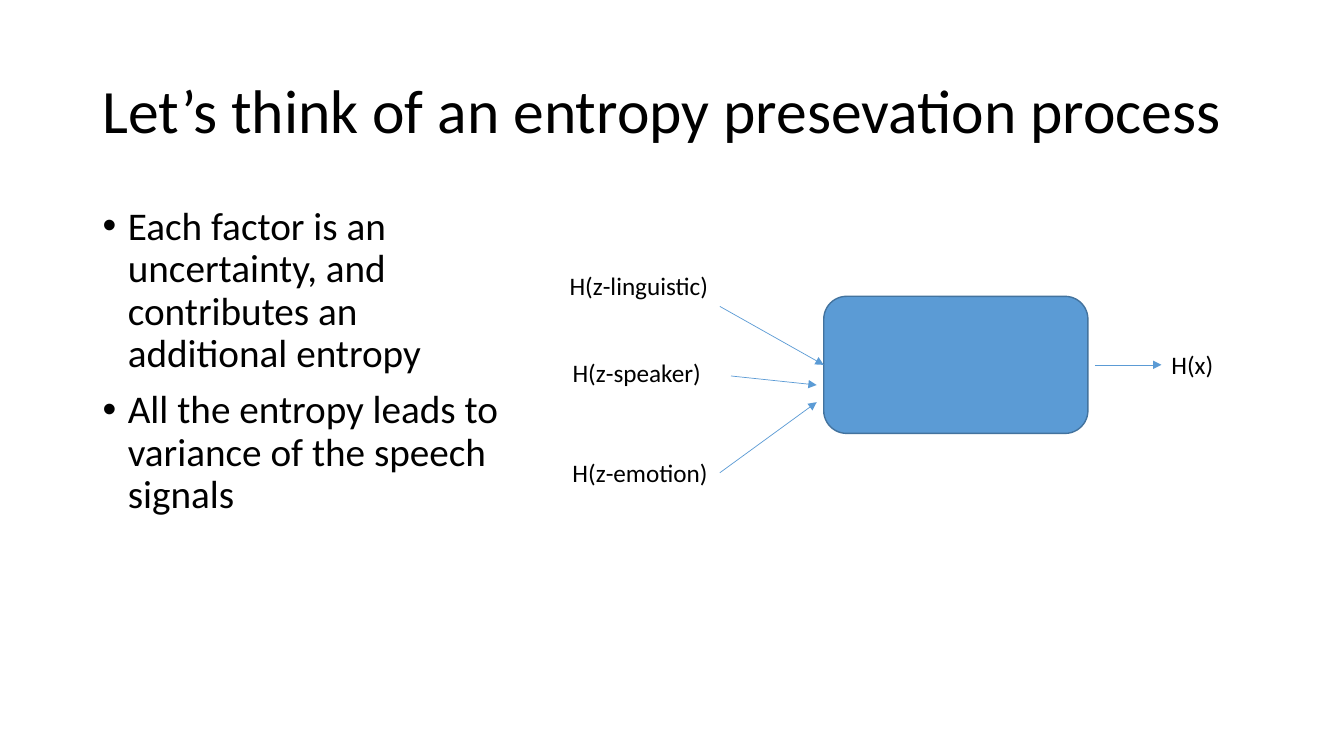
import pptx
import pptx.util
import pptx.dml.color
import pptx.enum.shapes
import pptx.enum.text
import pptx.oxml.ns
import lxml.etree

Inches = pptx.util.Inches
Pt = pptx.util.Pt
COLORS = {"text": "000000", "blue": "5B9BD5", "outline": "43739E"}
FONT = "Calibri"

presentation = pptx.Presentation()
presentation.slide_width = Inches(13.33)
presentation.slide_height = Inches(7.5)
slide = presentation.slides.add_slide(presentation.slide_layouts[6])


def rgb(name):
    return pptx.dml.color.RGBColor.from_string(COLORS[name])


def add_text(paragraphs, left, top, width, height, size=18, wrap=True, grow=False,
             middle=False, line_spacing=None, space_before=0, bullet=False):
    box = slide.shapes.add_textbox(Inches(left), Inches(top), Inches(width), Inches(height))
    frame = box.text_frame
    frame.word_wrap = wrap
    if grow:
        frame.auto_size = pptx.enum.text.MSO_AUTO_SIZE.SHAPE_TO_FIT_TEXT
    if middle:
        frame.vertical_anchor = pptx.enum.text.MSO_ANCHOR.MIDDLE
    frame.text = "\n".join(paragraphs)
    for paragraph in frame.paragraphs:
        paragraph.line_spacing = line_spacing
        paragraph.space_before = Pt(space_before)
        font = paragraph.runs[0].font
        font.name = FONT
        font.size = Pt(size)
        font.color.rgb = rgb("text")
        if bullet:
            properties = paragraph._p.get_or_add_pPr()
            properties.set("marL", str(Inches(0.25)))
            properties.set("indent", str(-Inches(0.25)))
            lxml.etree.SubElement(properties, pptx.oxml.ns.qn("a:buFont"), typeface="Arial")
            lxml.etree.SubElement(properties, pptx.oxml.ns.qn("a:buChar"), char="•")
    return box


# Title and bullets
add_text(["Let’s think of an entropy presevation process"], 0.92, 0.4, 11.5, 1.45,
         size=44, middle=True, line_spacing=0.9)
add_text(["Each factor is an uncertainty, and contributes an additional entropy",
          "All the entropy leads to variance of the speech signals"],
         0.92, 2, 4.2, 3.42, size=28, line_spacing=0.9, space_before=10, bullet=True)

# Process box
process = slide.shapes.add_shape(pptx.enum.shapes.MSO_SHAPE.ROUNDED_RECTANGLE,
                                 Inches(8.17), Inches(2.94), Inches(2.62), Inches(1.36))
process.shadow.inherit = False
process.fill.solid()
process.fill.fore_color.rgb = rgb("blue")
process.line.color.rgb = rgb("outline")
process.line.width = Pt(1)

# Entropy labels
labels = {}
for name, left, top, width, wrap in [
    ("H(z-linguistic)", 5.55, 2.63, 1.59, False),
    ("H(z-speaker)", 5.58, 3.5, 1.49, False),
    ("H(z-emotion)", 5.58, 4.49, 1.56, False),
    ("H(x)", 11.52, 3.42, 0.9, True),
]:
    labels[name] = add_text([name], left, top, width, 0.4, wrap=wrap, grow=True)

# Arrows: start, end, then the (shape, side) joined at each end
for start, end, source, target in [
    ((7.14, 3.04), (8.17, 3.62), None, (process, 1)),
    ((7.25, 3.73), (8.1, 3.82), None, None),
    ((7.14, 4.69), (8.1, 3.99), (labels["H(z-emotion)"], 3), None),
    ((10.86, 3.62), (11.52, 3.62), None, (labels["H(x)"], 1)),
]:
    arrow = slide.shapes.add_connector(pptx.enum.shapes.MSO_CONNECTOR.STRAIGHT,
                                       *map(Inches, start + end))
    if source:
        arrow.begin_connect(*source)
    if target:
        arrow.end_connect(*target)
    arrow.line.color.rgb = rgb("blue")
    arrow.line.width = Pt(0.5)
    lxml.etree.SubElement(arrow.line._get_or_add_ln(), pptx.oxml.ns.qn("a:tailEnd"),
                          type="triangle")
    lxml.etree.SubElement(arrow._element.spPr, pptx.oxml.ns.qn("a:effectLst"))

presentation.save("out.pptx")
